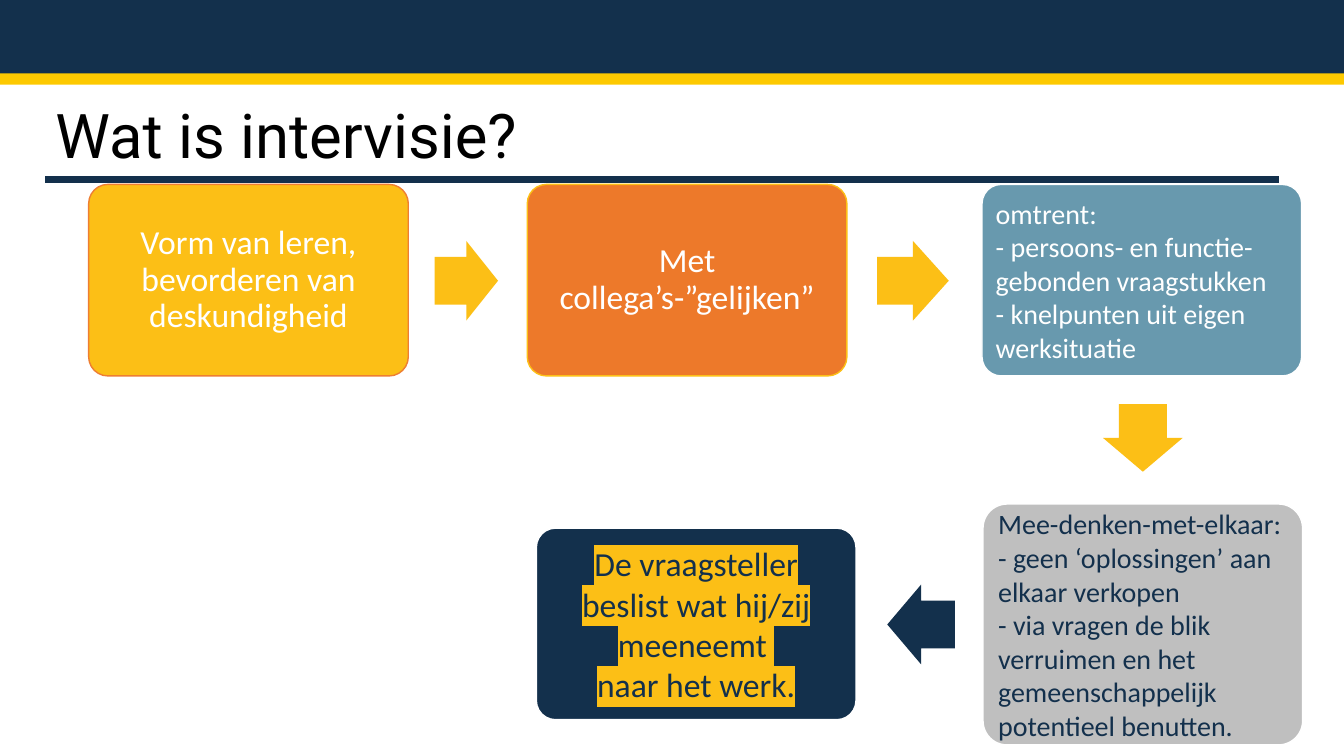
import pptx
import pptx.util
import pptx.dml.color
import pptx.enum.shapes
import pptx.enum.text
import pptx.oxml
import pptx.oxml.ns

Inches = pptx.util.Inches
Pt = pptx.util.Pt
SHAPE = pptx.enum.shapes.MSO_SHAPE
ALIGN = pptx.enum.text.PP_ALIGN
MIDDLE = pptx.enum.text.MSO_ANCHOR.MIDDLE
COLORS = {
    "navy": "13304C", "gold": "FDC900", "yellow": "FCBF16", "orange": "ED792A",
    "rust": "EE7E32", "blue": "6899AE", "grey": "BFBFBF", "white": "FFFFFF",
    "black": "000000",
}


def rgb(name):
    return pptx.dml.color.RGBColor.from_string(COLORS[name])


def add_filled(kind, box, fill, line=None):
    shape = slide.shapes.add_shape(kind, *[Inches(v) for v in box])
    shape.shadow.inherit = False
    shape.fill.solid()
    shape.fill.fore_color.rgb = rgb(fill)
    if line:
        shape.line.color.rgb = rgb(line)
        shape.line.width = Pt(1)
    else:
        shape.line.fill.background()
    return shape


prs = pptx.Presentation()
prs.slide_width = Inches(13.33)
prs.slide_height = Inches(7.5)
slide = prs.slides.add_slide(prs.slide_layouts[5])
slide.background.fill.solid()
slide.background.fill.fore_color.rgb = rgb("gold")

add_filled(SHAPE.RECTANGLE, (0, 0, 13.33, 0.73), "navy")
add_filled(SHAPE.RECTANGLE, (0, 0.84, 13.33, 6.66), "white")
title_rule = slide.shapes.add_connector(
    pptx.enum.shapes.MSO_CONNECTOR.STRAIGHT,
    Inches(0.45), Inches(1.78), Inches(12.69), Inches(1.78))
title_rule.line.color.rgb = rgb("navy")
title_rule.line.width = Pt(4.5)
title_rule._element.spPr.append(pptx.oxml.parse_xml(
    f'<a:effectLst {pptx.oxml.ns.nsdecls("a")}/>'))

title = slide.shapes.title
title._element.getparent().append(title._element)
title.left, title.top = Inches(0.45), Inches(1.04)
title.width, title.height = Inches(12.24), Inches(0.67)
title.text_frame.text = "Wat is intervisie?"
title.text_frame.vertical_anchor = MIDDLE
heading = title.text_frame.paragraphs[0]
heading.alignment = ALIGN.LEFT
heading.line_spacing = 0.9
heading.font.name = "Roboto"
heading.font.size = Pt(44)
heading.font.color.rgb = rgb("black")

steps = [
    ((0.88, 1.83, 3.17, 1.9), "yellow", "rust", "white", 24, ALIGN.CENTER, 0.9, None,
     ["Vorm van leren, bevorderen van deskundigheid"]),
    ((5.23, 1.83, 3.17, 1.9), "orange", "yellow", "white", 24, ALIGN.CENTER, 0.9, None,
     ["Met collega’s-”gelijken”"]),
    ((9.74, 1.83, 3.17, 1.9), "blue", "white", "white", 20, ALIGN.LEFT, 1.0, None,
     ["omtrent:",
      "- persoons- en functie-gebonden vraagstukken",
      "- knelpunten uit eigen werksituatie"]),
    ((9.75, 5, 3.17, 2.39), "grey", "white", "navy", 20, ALIGN.LEFT, 1.0, None,
     ["Mee-denken-met-elkaar:",
      "- geen ‘oplossingen’ aan elkaar verkopen",
      "- via vragen de blik verruimen en het gemeenschappelijk potentieel benutten."]),
    ((5.32, 5.24, 3.17, 1.9), "navy", "white", "navy", 24, ALIGN.CENTER, 1.0, "yellow",
     ["De vraagsteller beslist wat hij/zij meeneemt ", "naar het werk."]),
]
for box, fill, line, ink, size, align, spacing, highlight, lines in steps:
    step = add_filled(SHAPE.ROUNDED_RECTANGLE, box, fill, line)
    step.adjustments[0] = 0.1
    frame = step.text_frame
    frame.word_wrap = True
    frame.vertical_anchor = MIDDLE
    inset = Inches(size / 250)
    frame.margin_left = frame.margin_right = inset
    frame.margin_top = frame.margin_bottom = inset
    frame.text = "\n".join(lines)
    for paragraph in frame.paragraphs:
        paragraph.alignment = align
        paragraph.line_spacing = spacing
        paragraph.font.name = "Calibri"
        paragraph.font.size = Pt(size)
        paragraph.font.color.rgb = rgb(ink)
        if highlight:
            paragraph.runs[0]._r.get_or_add_rPr().append(pptx.oxml.parse_xml(
                f'<a:highlight {pptx.oxml.ns.nsdecls("a")}>'
                f'<a:srgbClr val="{COLORS[highlight]}"/></a:highlight>'))

arrows = [
    ((4.31, 2.39, 0.63, 0.79), 0, "yellow"),
    ((8.7, 2.39, 0.71, 0.79), 0, "yellow"),
    ((11, 3.95, 0.67, 0.79), 90, "yellow"),
    ((8.8, 5.8, 0.67, 0.79), 180, "navy"),
]
for box, rotation, fill in arrows:
    arrow = add_filled(SHAPE.RIGHT_ARROW, box, fill)
    arrow.adjustments[0] = 0.6
    arrow.adjustments[1] = 0.5
    arrow.rotation = rotation

prs.save("out.pptx")
